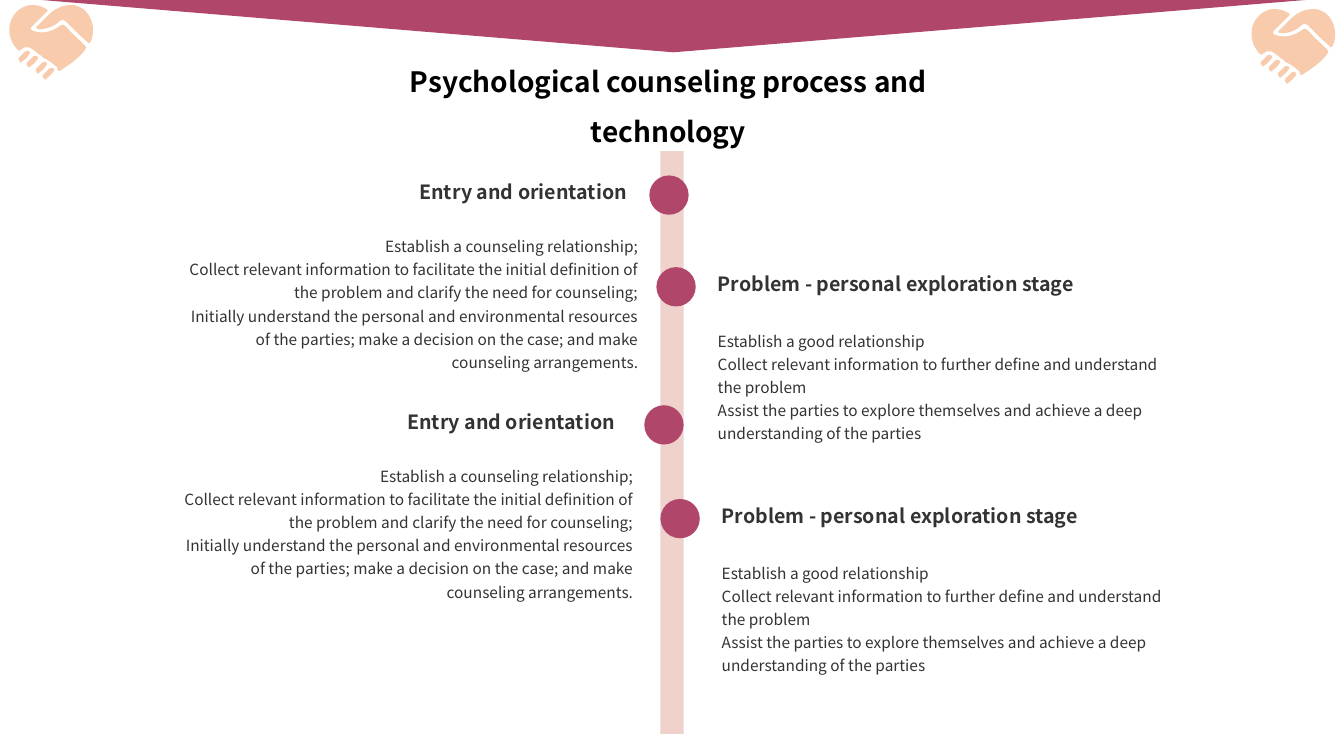
from lxml.etree import SubElement
from pptx import Presentation
from pptx.dml.color import RGBColor
from pptx.enum.shapes import MSO_SHAPE as SHAPE
from pptx.enum.text import MSO_AUTO_SIZE as AUTO, PP_ALIGN as ALIGN
from pptx.oxml.ns import qn
from pptx.util import Inches, Pt

THEME = {
    "font": "Noto Sans CJK SC",
    "berry": RGBColor.from_string("B0466A"),
    "blush": RGBColor.from_string("EED2CB"),
    "peach": RGBColor.from_string("F8CBAD"),
    "ink": RGBColor.from_string("333333"),
    "black": RGBColor.from_string("000000"),
    "title": Pt(20),
    "heading": Pt(14),
    "body": Pt(11),
}

deck = Presentation()
deck.slide_width, deck.slide_height = Inches(13.33), Inches(7.5)
slide = deck.slides.add_slide(deck.slide_layouts[6])


def paint(shape, color):
    shape.shadow.inherit = False
    shape.fill.solid()
    shape.fill.fore_color.rgb = THEME[color]
    shape.line.fill.background()


def write(box, lines, size, color="ink", bold=False, wrap=True, align=ALIGN.LEFT, spacing=1.0):
    frame = slide.shapes.add_textbox(*map(Inches, box)).text_frame
    frame.word_wrap = wrap
    frame.auto_size = AUTO.SHAPE_TO_FIT_TEXT
    for i, line in enumerate(lines):
        paragraph = frame.add_paragraph() if i else frame.paragraphs[0]
        paragraph.alignment, paragraph.line_spacing = align, spacing
        run = paragraph.add_run()
        run.text = line
        style = {"name": THEME["font"], "size": THEME[size], "bold": bold}
        for key, value in style.items():
            setattr(run.font, key, value)
        run.font.color.rgb = THEME[color]


# Title
write((3.36, 0.42, 6.54, 1.05), ["Psychological counseling process and technology"],
      "title", "black", bold=True, align=ALIGN.CENTER, spacing=1.5)

# Timeline rail
rail = slide.shapes.add_shape(SHAPE.RECTANGLE, *map(Inches, (6.55, 1.5, 0.23, 5.78)))
paint(rail, "blush")

# Stages: the two kinds alternate on the left and right of the rail
ENTRY = {
    "heading": "Entry and orientation", "width": 2.32,
    "align": ALIGN.RIGHT, "drop": 0.52, "height": 1.47,
    "body": [
        "Establish a counseling relationship;",
        "Collect relevant information to facilitate the initial definition of the problem "
        "and clarify the need for counseling;",
        "Initially understand the personal and environmental resources of the parties; "
        "make a decision on the case; and make counseling arrangements.",
    ],
}
EXPLORATION = {
    "heading": "Problem - personal exploration stage", "width": 3.89,
    "align": ALIGN.LEFT, "drop": 0.55, "height": 1.24,
    "body": [
        "Establish a good relationship",
        "Collect relevant information to further define and understand the problem",
        "Assist the parties to explore themselves and achieve a deep understanding "
        "of the parties",
    ],
}
# stage, top, marker left, heading left, body left
timeline = [
    (ENTRY, 1.74, 6.44, 4.06, 1.71),
    (EXPLORATION, 2.65, 6.51, 7.02, 7.02),
    (ENTRY, 4.02, 6.39, 3.94, 1.66),
    (EXPLORATION, 4.95, 6.55, 7.06, 7.06),
]
for stage, top, marker_x, heading_x, body_x in timeline:
    marker = slide.shapes.add_shape(SHAPE.OVAL, *map(Inches, (marker_x, top, 0.39, 0.39)))
    marker.rotation = 90
    paint(marker, "berry")
    write((body_x, top + stage["drop"], 4.72, stage["height"]), stage["body"],
          "body", align=stage["align"], spacing=1.25)
    write((heading_x, top, stage["width"], 0.34), [stage["heading"]],
          "heading", bold=True, wrap=False)

# Top banner, pointing down
banner = slide.shapes.add_shape(SHAPE.ISOSCELES_TRIANGLE, *map(Inches, (-0.08, -0.04, 13.52, 0.56)))
banner.element.spPr.find(qn("a:xfrm")).set("flipV", "1")
paint(banner, "berry")

# Handshake hearts: each outline is a start point, then three points per Bezier curve
left_hand = [
    (.32, .05), (.36, .05), (.41, .06), (.44, .08), (.48, .1), (.48, .1), (.45, .13),
    (.41, .17), (.37, .21), (.33, .25), (.29, .28), (.3, .3), (.34, .31),
    (.43, .34), (.52, .31), (.59, .26), (.62, .24), (.63, .24), (.65, .26),
    (.71, .33), (.78, .39), (.84, .45), (.86, .46), (.86, .48), (.84, .5),
    (.78, .58), (.69, .64), (.6, .7), (.59, .71), (.58, .71), (.57, .69),
    (.57, .68), (.57, .67), (.57, .67), (.53, .64), (.49, .6), (.44, .58),
    (.43, .57), (.41, .57), (.41, .55), (.41, .55), (.41, .55), (.4, .55),
    (.36, .52), (.33, .49), (.29, .47), (.26, .46), (.23, .47), (.21, .49),
    (.2, .51), (.18, .51), (.17, .49), (.08, .39), (.07, .26), (.13, .16),
    (.18, .09), (.24, .05), (.32, .05),
]
right_hand = [
    (.71, .05), (.87, .05), (.97, .25), (.9, .41), (.88, .44), (.87, .43), (.86, .41),
    (.79, .35), (.72, .28), (.65, .21), (.63, .19), (.62, .19), (.59, .21),
    (.54, .26), (.47, .29), (.39, .29), (.38, .28), (.37, .29), (.36, .28),
    (.35, .26), (.37, .26), (.38, .25), (.42, .21), (.46, .17), (.5, .13),
    (.56, .08), (.62, .05), (.71, .05),
]
finger = [
    (.03, .12), (.02, .12), (.01, .11), (.01, .1), (0, .09), (0, .08), (.01, .07),
    (.03, .05), (.05, .03), (.07, .01), (.08, 0), (.1, 0), (.11, .01),
    (.12, .02), (.12, .03), (.11, .04), (.09, .07), (.07, .09), (.04, .11),
    (.04, .11), (.04, .11), (.03, .12),
]
finger_places = [(.42, .67), (.35, .61), (.26, .55), (.18, .5)]
heart_parts = [left_hand, right_hand] + [
    [(x + dx, y + dy) for x, y in finger] for dx, dy in finger_places]

for heart_x, heart_y in [(12.32, 0.04), (0, 0)]:
    heart = slide.shapes.add_group_shape()
    for part in heart_parts:
        outline = [(Inches(heart_x + x), Inches(heart_y + y)) for x, y in part]
        builder = heart.shapes.build_freeform(*outline[0])
        builder.add_line_segments(outline[1:], close=True)
        hand = builder.convert_to_shape()
        paint(hand, "peach")
        # Every three straight segments become the points of one curve
        segments = list(hand.element.iter(qn("a:lnTo")))
        for i in range(0, len(segments), 3):
            curve = SubElement(segments[i].getparent(), qn("a:cubicBezTo"))
            segments[i].addprevious(curve)
            for segment in segments[i:i + 3]:
                curve.append(segment[0])
                segment.getparent().remove(segment)

deck.save("out.pptx")
